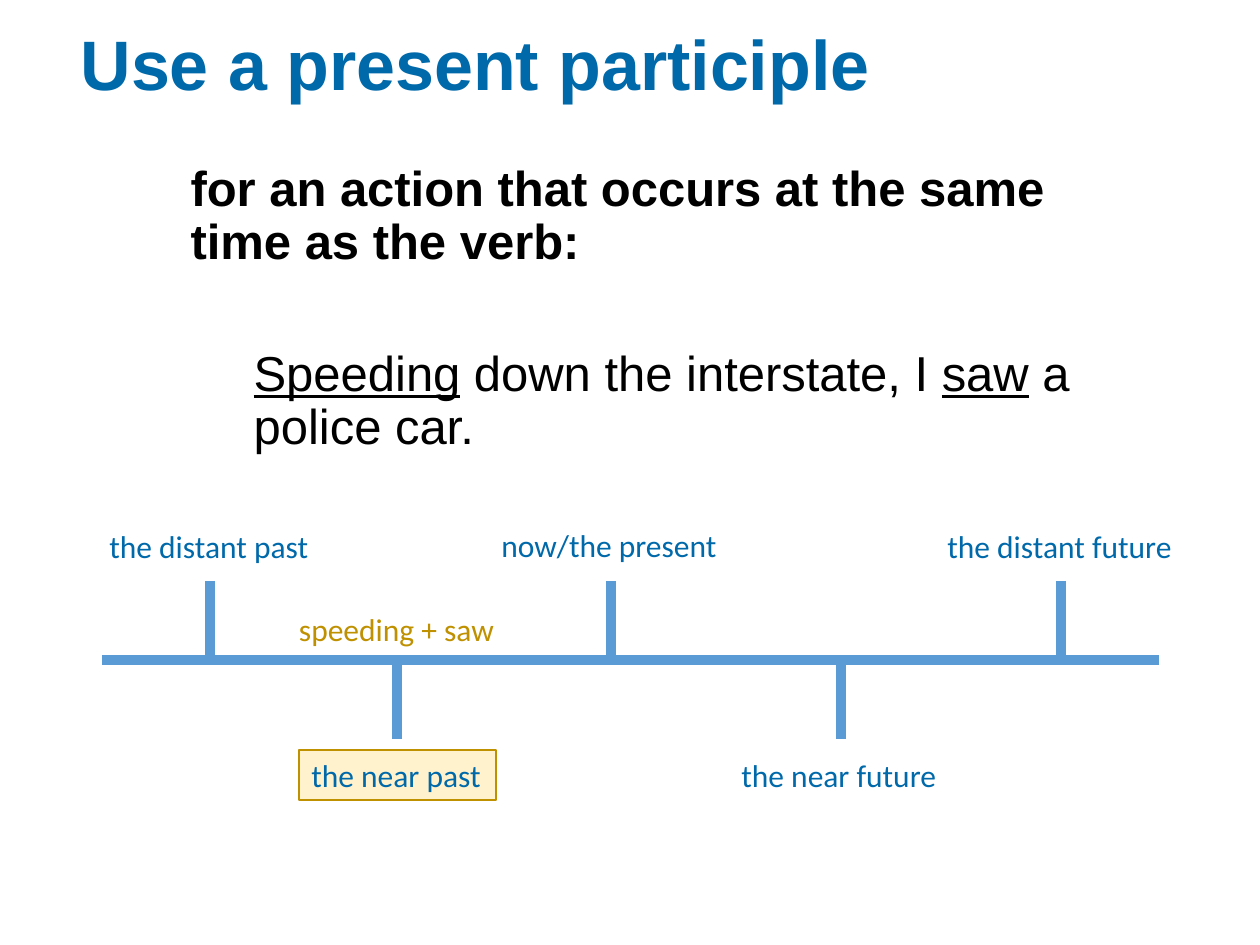
"""Build a slide that places the present participle on a timeline."""
from lxml.etree import SubElement
from pptx import Presentation
from pptx.dml.color import RGBColor
from pptx.enum.shapes import MSO_CONNECTOR, MSO_SHAPE
from pptx.enum.text import MSO_ANCHOR, MSO_AUTO_SIZE, PP_ALIGN
from pptx.oxml.ns import qn
from pptx.util import Emu, Pt

COLORS = {
    "title": "0069AA",
    "body": "000000",
    "timeline": "5B9BD5",
    "example": "BF9000",
    "highlight": "FFF2CC",
}


def px(count):
    return Emu(round(count * 914400 / 126))


def write(paragraph, text, size=18, font="Calibri", color="title", bold=False, underline=False):
    span = paragraph.add_run()
    span.text = text
    span.font.name = font
    span.font.size = Pt(size)
    span.font.bold = bold
    span.font.underline = underline
    span.font.color.rgb = RGBColor.from_string(COLORS[color])


deck = Presentation()
deck.slide_width, deck.slide_height = px(1260), px(945)
page = deck.slides.add_slide(deck.slide_layouts[1])
title, body = page.placeholders

AXIS, TICK = 660, 79
timeline = [(102, AXIS, 1159, AXIS)]
timeline += [(x, AXIS - TICK, x, AXIS) for x in (210, 611, 1061)]
timeline += [(x, AXIS, x, AXIS + TICK) for x in (397, 841)]
for x1, y1, x2, y2 in timeline:
    line = page.shapes.add_connector(MSO_CONNECTOR.STRAIGHT, px(x1), px(y1), px(x2), px(y2))
    line.line.color.rgb = RGBColor.from_string(COLORS["timeline"])
    line.line.width = Pt(6)
    SubElement(line._element.spPr, qn("a:effectLst"))

title.left, title.top, title.width, title.height = px(68), px(36), px(1125), px(63)
title.text_frame.auto_size = MSO_AUTO_SIZE.NONE
title.text_frame.vertical_anchor = MSO_ANCHOR.MIDDLE
heading = title.text_frame.paragraphs[0]
heading.alignment = PP_ALIGN.LEFT
heading.line_spacing = 0.9
write(heading, "Use a present participle", size=40, font="Arial", bold=True)

body.left, body.top, body.width, body.height = px(178), px(158), px(907), px(306)
body.text_frame.auto_size = MSO_AUTO_SIZE.NONE
rule = body.text_frame.paragraphs[0]
example = body.text_frame.add_paragraph()
example.level = 1
for paragraph, indent, space in ((rule, 0, 0), (example, 63, 45)):
    paragraph.line_spacing = 0.9
    paragraph.space_before = Pt(space)
    properties = paragraph._p.get_or_add_pPr()
    properties.set("marL", str(px(indent)))
    properties.set("indent", "0")
    SubElement(properties, qn("a:buNone"))
write(rule, "for an action that occurs at the same time as the verb:",
      size=28, font="Arial", color="body", bold=True)
for text, underline in (
    ("Speeding", True),
    (" down the interstate, I ", False),
    ("saw", True),
    (" a police car.", False),
):
    write(example, text, size=28, font="Arial", color="body", underline=underline)

near_past = page.shapes.add_shape(MSO_SHAPE.RECTANGLE, px(299), px(750), px(197), px(50))
near_past.shadow.inherit = False
near_past.fill.solid()
near_past.fill.fore_color.rgb = RGBColor.from_string(COLORS["highlight"])
near_past.line.color.rgb = RGBColor.from_string(COLORS["example"])
near_past.line.width = Pt(0.75)

labels = [(near_past, "the near past", "title", PP_ALIGN.LEFT)]
for text, left, top, width, color, alignment in (
    ("the distant past", 97, 521, 227, "title", PP_ALIGN.LEFT),
    ("now/the present", 489, 520, 243, "title", PP_ALIGN.LEFT),
    ("the distant future", 935, 521, 252, "title", PP_ALIGN.LEFT),
    ("the near future", 729, 750, 223, "title", PP_ALIGN.LEFT),
    ("speeding + saw", 285, 604, 223, "example", PP_ALIGN.CENTER),
):
    box = page.shapes.add_textbox(px(left), px(top), px(width), px(50))
    labels.append((box, text, color, alignment))

for box, text, color, alignment in labels:
    frame = box.text_frame
    frame.word_wrap = False
    frame.auto_size = MSO_AUTO_SIZE.SHAPE_TO_FIT_TEXT
    frame.vertical_anchor = MSO_ANCHOR.TOP
    frame.paragraphs[0].alignment = alignment
    write(frame.paragraphs[0], text, color=color)

deck.save("out.pptx")
